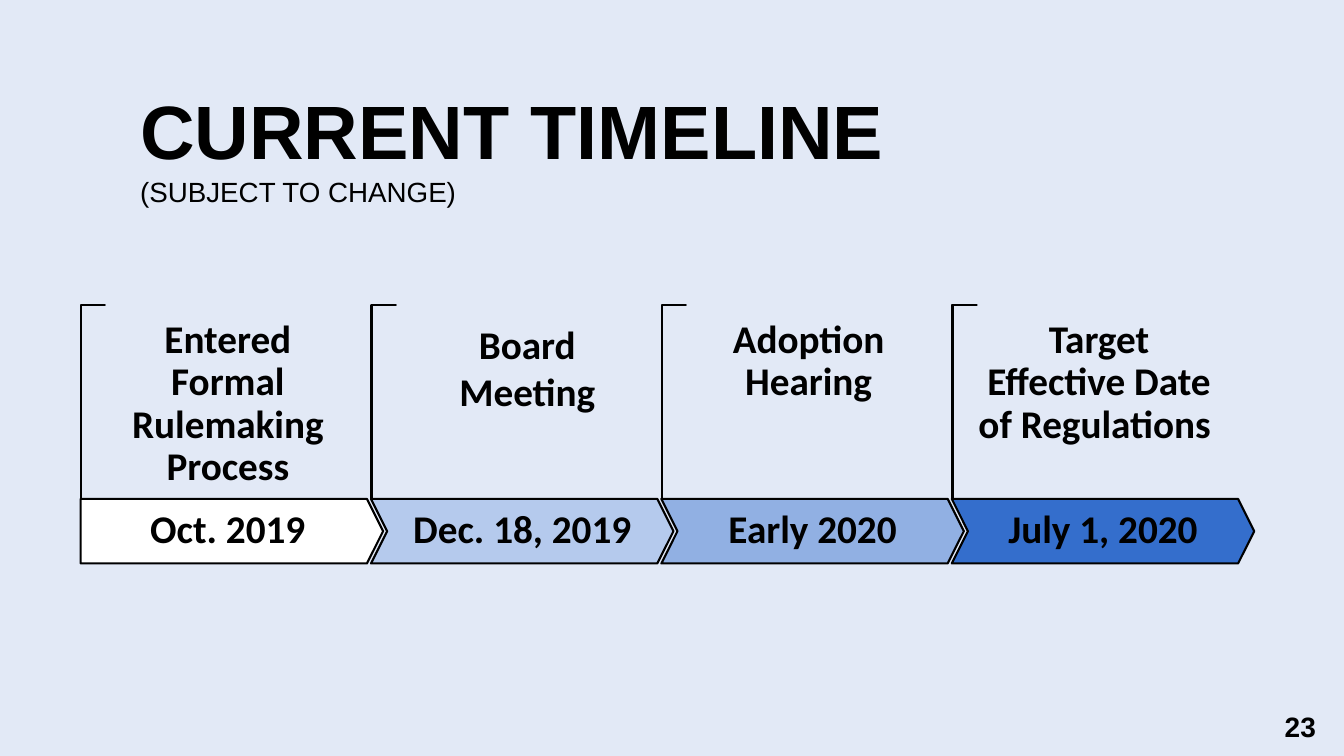
from pptx import Presentation
from pptx.dml.color import RGBColor
from pptx.enum.shapes import MSO_SHAPE
from pptx.enum.text import MSO_ANCHOR, MSO_AUTO_SIZE, PP_ALIGN
from pptx.util import Inches, Pt

BLACK = RGBColor(0, 0, 0)
WHITE = RGBColor(255, 255, 255)
BACK = RGBColor(0xE2, 0xE9, 0xF6)
PALE = RGBColor(0xB5, 0xCA, 0xED)
MID = RGBColor(0x91, 0xB0, 0xE3)
DEEP = RGBColor(0x34, 0x6E, 0xCC)

LEFT, STEP = 0.8, 2.88
# date, fill, label lines, label left and top within the step, line spacing
STEPS = [
    ("Oct. 2019", WHITE, ["Entered Formal Rulemaking Process"], 0.24, 3.17, 0.9),
    ("Dec. 18, 2019", PALE, ["Board", "Meeting"], 0.33, 3.18, 1.0),
    ("Early 2020", MID, ["Adoption Hearing"], 0.24, 3.17, 0.9),
    ("July 1, 2020", DEEP, ["Target Effective Date of Regulations "], 0.24, 3.17, 0.9),
]


def box(*sides):
    return [Inches(side) for side in sides]


def style(font, name, size, bold=True):
    font.name, font.size, font.bold = name, Pt(size), bold
    font.color.rgb = BLACK


def write(frame, lines, name, size, align, space=1.0):
    frame.word_wrap = True
    frame.text = "\n".join(lines)
    for para in frame.paragraphs:
        para.alignment, para.line_spacing = align, space
        style(para.font, name, size)


def pad(frame, side, ends):
    frame.margin_left = frame.margin_right = Inches(side)
    frame.margin_top = frame.margin_bottom = Inches(ends)


def add_shape(slide, kind, place, fill, adjust):
    shape = slide.shapes.add_shape(kind, *box(*place))
    shape.shadow.inherit = False
    shape.fill.solid()
    shape.fill.fore_color.rgb = fill
    shape.line.color.rgb = BLACK
    shape.line.width = Pt(1.5)
    for index, value in enumerate(adjust):
        shape.adjustments[index] = value
    return shape


def add_title(slide):
    title = slide.shapes.title
    title.left, title.top, title.width, title.height = box(1.29, 1.05, 10.75, 1.3)
    frame = title.text_frame
    frame.auto_size = MSO_AUTO_SIZE.NONE
    frame.word_wrap = True
    frame.vertical_anchor = MSO_ANCHOR.MIDDLE
    frame.margin_bottom = Inches(0.55)
    para = frame.paragraphs[0]
    para.alignment = PP_ALIGN.LEFT
    head = para.add_run()
    head.text = "CURRENT TIMELINE"
    style(head.font, "Arial", 54)
    para.add_line_break()
    note = para.add_run()
    note.text = "(SUBJECT TO CHANGE)"
    style(note.font, "Arial", 19.8, False)


def add_step(slide, index, date, fill, lines, shift, top, space):
    """Add one bracket, its dated arrow and the label above it."""
    left = LEFT + index * STEP
    bracket = add_shape(slide, MSO_SHAPE.CORNER, (left - 0.84, 3.87, 1.93, 0.24),
                        WHITE, (0.01, 0.01))
    bracket.rotation = 90
    kind = MSO_SHAPE.CHEVRON if index else MSO_SHAPE.PENTAGON
    arrow = add_shape(slide, kind, (left, 4.95, 3, 0.64), fill, (0.25,))
    pad(arrow.text_frame, 0.19, 0)
    arrow.text_frame.vertical_anchor = MSO_ANCHOR.MIDDLE
    write(arrow.text_frame, [date], "Calibri", 28, PP_ALIGN.CENTER, 0.9)
    label = slide.shapes.add_textbox(*box(left + shift, top, 2.44, 1.22))
    pad(label.text_frame, 0, 0)
    write(label.text_frame, lines, "Calibri", 28, PP_ALIGN.CENTER, space)


def add_number(slide, text):
    number = slide.shapes.add_textbox(*box(12.55, 7, 0.6, 0.41))
    number.text_frame.vertical_anchor = MSO_ANCHOR.MIDDLE
    write(number.text_frame, [text], "Arial", 20, PP_ALIGN.RIGHT)


def main():
    deck = Presentation()
    deck.slide_width, deck.slide_height = box(13.33, 7.5)
    slide = deck.slides.add_slide(deck.slide_layouts[5])
    slide.background.fill.solid()
    slide.background.fill.fore_color.rgb = BACK
    add_title(slide)
    for index, step in enumerate(STEPS):
        add_step(slide, index, *step)
    add_number(slide, "23")
    deck.save("out.pptx")


if __name__ == "__main__":
    main()
